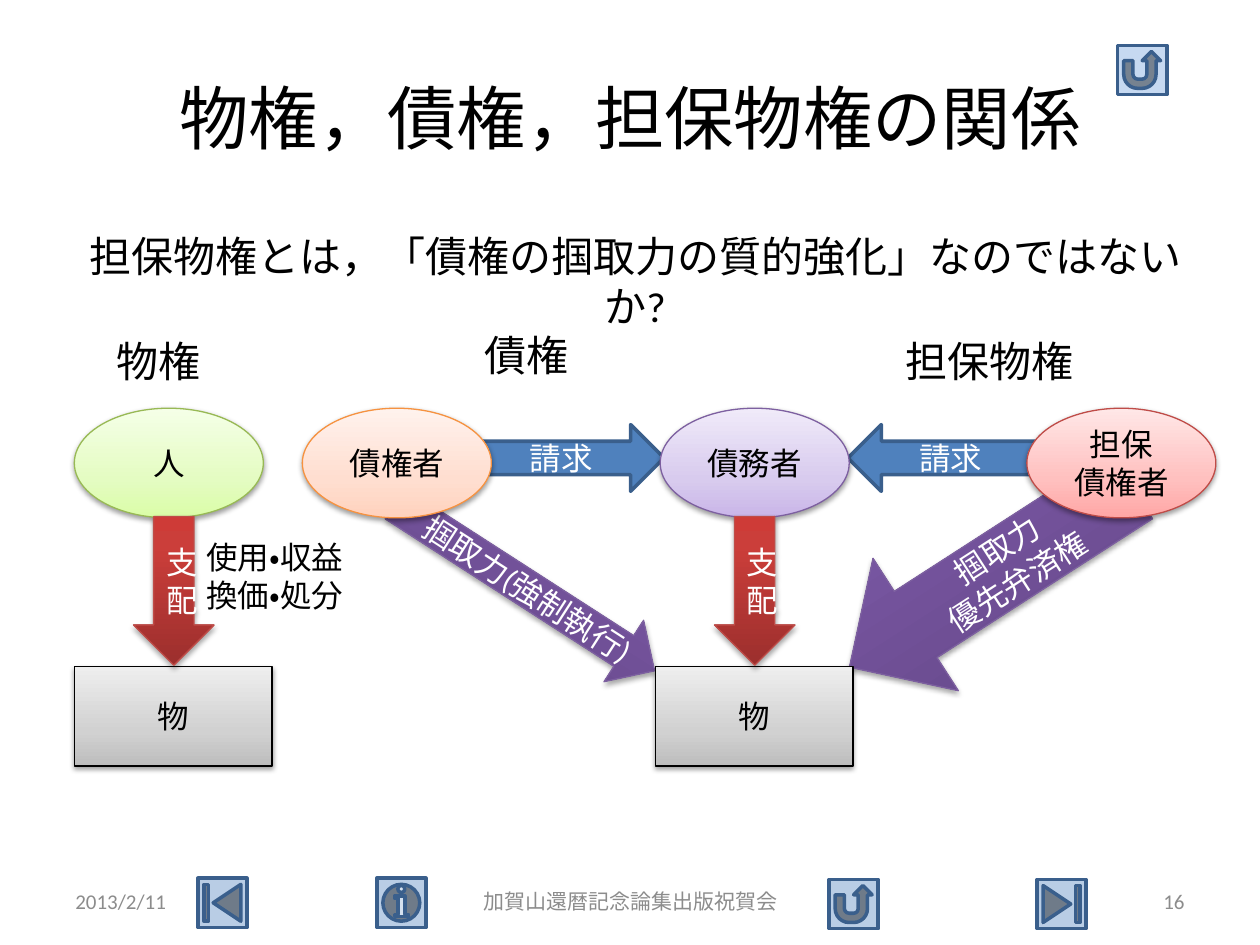
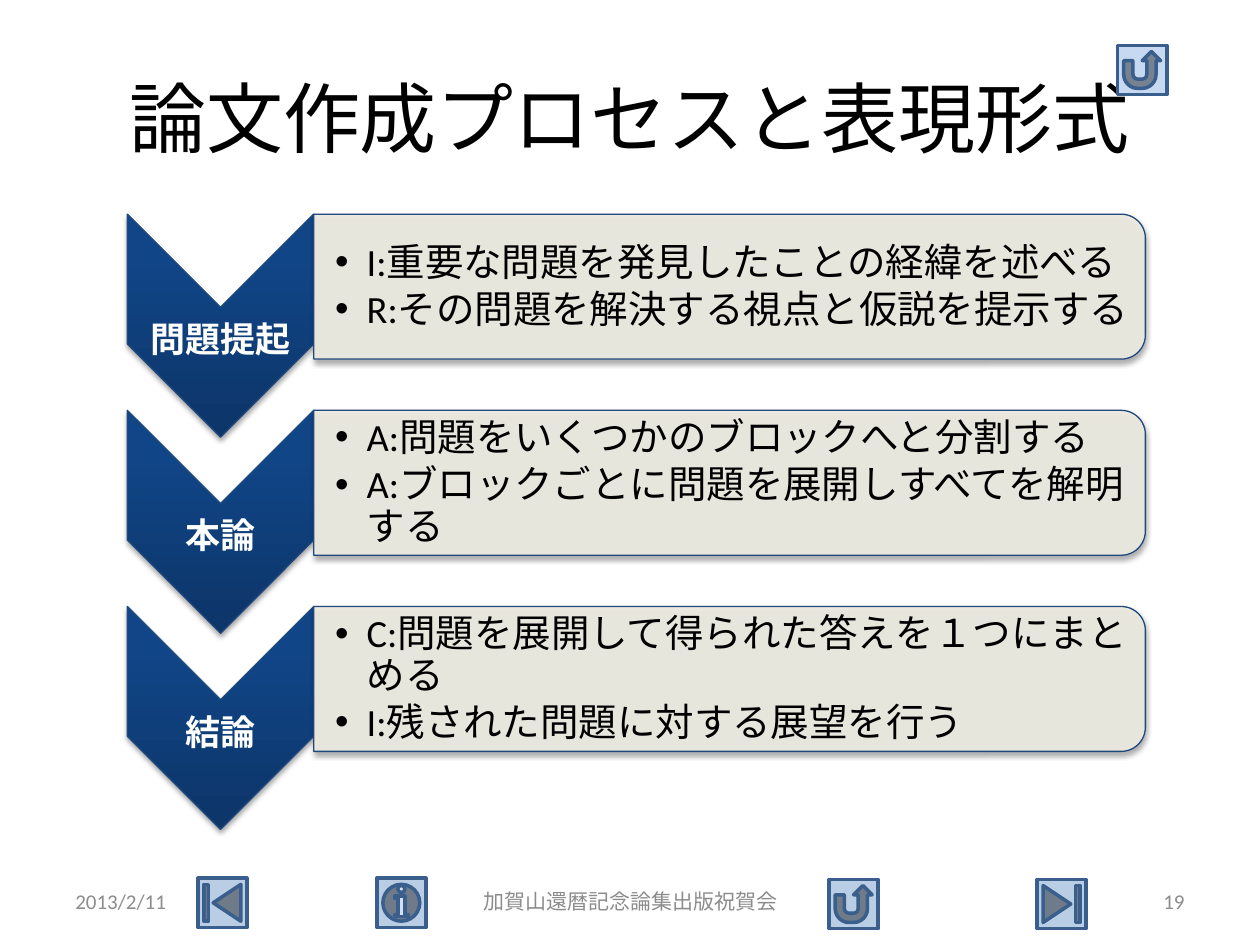
from dataclasses import dataclass
from typing import NamedTuple

from lxml.etree import SubElement as Sub
from pptx import Presentation
from pptx.dml.color import RGBColor as Rgb
from pptx.enum.lang import MSO_LANGUAGE_ID as Lang
from pptx.enum.shapes import MSO_SHAPE as Geo
from pptx.enum.text import MSO_ANCHOR as Anchor, MSO_AUTO_SIZE as Fit, PP_ALIGN as Align
from pptx.oxml.ns import qn
from pptx.util import Inches, Pt


@dataclass(frozen=True)
class Theme:
    font: str = "Calibri"
    ink: str = "000000"
    pale: str = "FFFFFF"
    gray: str = "8C8C8C"
    edge: str = "3A5F8C"
    blue: str = "4F81BD"
    button: str = "B9CDE5"
    corner: str = "C6D9F1"
    navy: str = "1F497D"
    cream: str = "EEECE1"
    title: float = 44
    tight: float = 39.6
    head: float = 24
    item: float = 22
    step: float = 20
    body: float = 18
    foot: float = 12


@dataclass(frozen=True)
class Paint:
    stops: tuple
    line: str
    ink: str
    alpha: int
    drop: float


def soft(low, mid, high, line):
    return Paint(((0, low), (35, mid), (100, high)), line, T.ink, 38, 1.6)


def deep(low, mid, high, line):
    return Paint(((0, low), (80, mid), (100, high)), line, T.pale, 35, 1.8)


class Box(NamedTuple):
    x: float
    y: float
    w: float
    h: float

    def cut(self, x, y, w, h):
        return Box(self.x + x, self.y + y, w, h)

    def turn(self):
        return Box(self.x + (self.w - self.h) / 2, self.y + (self.h - self.w) / 2,
                   self.h, self.w)

    def size(self):
        return [Inches(v) for v in self]


T = Theme()
GREEN = soft("DAFDA7", "E4FCC2", "F5FFE7", "98B955")
ORANGE = soft("FFD2BD", "FFDED0", "FFF2ED", "F69240")
LILAC = soft("C9B5E8", "D8CBEE", "F0EAF9", "7D60A0")
PINK = soft("FFA6A5", "FFC0BF", "FFE7E7", "BF4C48")
SILVER = soft("BDBDBD", "D1D1D1", "EEEEEE", "000000")
RED = deep("9C2F2D", "CB3E3A", "CE3B37", "BF4C48")
PURPLE = deep("5F4480", "7B58A6", "7C57A8", "7D60A0")
NAVY = deep("0D3568", "104587", "0E458A", T.navy)

STEPS = (
    ("問題提起", "I:重要な問題を発見したことの経緯を述べる\nR:その問題を解決する視点と仮説を提示する"),
    ("本論", "A:問題をいくつかのブロックへと分割する\nA:ブロックごとに問題を展開しすべてを解明する"),
    ("結論", "C:問題を展開して得られた答えを１つにまとめる\nI:残された問題に対する展望を行う"),
)


def put(item, **vals):
    for name, val in vals.items():
        setattr(item, name, val)


def write(shape, text, size, ink=T.ink, align=Align.CENTER, bold=False, frame=None, para=None):
    body = shape.text_frame
    body.text = text
    put(body, word_wrap=True, **(frame or {}))
    for line in body.paragraphs:
        put(line, alignment=align, **(para or {}))
        for run in line.runs:
            put(run.font, name=T.font, size=Pt(size), bold=bold, language_id=Lang.JAPANESE)
            run.font.color.rgb = Rgb.from_string(ink)


def label(slide, box, text, size, **opts):
    shape = slide.shapes.add_textbox(*box.size())
    write(shape, text, size, **opts)
    return shape


def flat(slide, box, geo, fill, line=T.edge, width=2):
    shape = slide.shapes.add_shape(geo, *box.size())
    shape.shadow.inherit = False
    shape.fill.solid()
    shape.fill.fore_color.rgb = Rgb.from_string(fill)
    shape.line.color.rgb = Rgb.from_string(line)
    shape.line.width = Pt(width)
    return shape


def shade(shape, alpha, drop):
    effect = shape.element.spPr.find(qn("a:effectLst"))
    cast = Sub(effect, qn("a:outerShdw"), blurRad=str(Pt(3.1)), dist=str(Pt(drop)),
               dir="5400000", rotWithShape="0")
    color = Sub(cast, qn("a:srgbClr"), val=T.ink)
    Sub(color, qn("a:alpha"), val=str(alpha * 1000))


def glow(slide, box, geo, paint, text="", align=Align.CENTER):
    shape = flat(slide, box, geo, T.pale, paint.line, 0.75)
    shape.fill.gradient()
    shape.fill.gradient_angle = 90
    stops = shape.element.spPr.find(qn("a:gradFill")).find(qn("a:gsLst"))
    stops.clear()
    for pos, color in paint.stops:
        stop = Sub(stops, qn("a:gs"), pos=str(pos * 1000))
        Sub(stop, qn("a:srgbClr"), val=color)
    shade(shape, paint.alpha, paint.drop)
    if text:
        write(shape, text, T.body, paint.ink, align)
    return shape


def button(slide, box, geo, fill=T.button):
    flat(slide, box, geo, fill)


def footer(slide, box, number):
    for x, y, geo in ((7.73, 0.03, Geo.ACTION_BUTTON_END),
                      (6.08, 0.03, Geo.ACTION_BUTTON_RETURN),
                      (1.07, 0.02, Geo.ACTION_BUTTON_BEGINNING),
                      (2.49, 0.02, Geo.ACTION_BUTTON_INFORMATION)):
        button(slide, box.cut(x, y, 0.39, 0.39), geo)
    for x, w, text, align in ((0, 2.33, "2013/2/11", Align.LEFT),
                              (2.92, 3.17, "加賀山還暦記念論集出版祝賀会", Align.CENTER),
                              (6.67, 2.33, str(number), Align.RIGHT)):
        label(slide, box.cut(x, 0, w, box.h), text, T.foot, ink=T.gray, align=align,
              frame={"vertical_anchor": Anchor.MIDDLE})


def start(deck, box, text, size, number):
    slide = deck.slides.add_slide(deck.slide_layouts[5])
    title = slide.shapes.title
    put(title, **dict(zip(("left", "top", "width", "height"), box.size())))
    write(title, text, size,
          frame={"vertical_anchor": Anchor.MIDDLE, "auto_size": Fit.NONE})
    footer(slide, Box(0.5, 6.95, 9, 0.4), number)
    button(slide, Box(8.87, 0.36, 0.39, 0.39), Geo.ACTION_BUTTON_RETURN, T.corner)
    return slide


def claims(slide, box):
    for x, geo in ((3.18, Geo.RIGHT_ARROW), (6.14, Geo.LEFT_ARROW)):
        arrow = flat(slide, box.cut(x, 0.13, 1.5, 0.53), geo, T.blue)
        write(arrow, "請求", T.body, T.pale)
    arrow = glow(slide, box.cut(5.94, 0.71, 2.66, 1.25), Geo.RIGHT_ARROW, PURPLE,
                 "掴取力\n優先弁済権")
    arrow.rotation = -32.8
    arrow.element.spPr.xfrm.set("flipH", "1")
    arrow = glow(slide, box.cut(2.35, 1.13, 2.45, 0.58), Geo.RIGHT_ARROW, PURPLE,
                 "掴取力(強制執行)", Align.RIGHT)
    arrow.rotation = 32.8


def rights(slide, box):
    claims(slide, box)
    for x, text, paint in ((0, "人", GREEN), (1.81, "債権者", ORANGE),
                           (4.65, "債務者", LILAC), (7.56, "担保\n債権者", PINK)):
        glow(slide, box.cut(x, 0, 1.5, 0.87), Geo.OVAL, paint, text)
    for x in (0, 4.61):
        glow(slide, box.cut(x, 2.05, 1.57, 0.79), Geo.RECTANGLE, SILVER, "物")
        glow(slide, box.cut(x + 0.47, 0.86, 0.64, 1.18), Geo.DOWN_ARROW, RED, "支配")
    for x, y, text in ((-0.16, -0.63, "物権"), (2.76, -0.67, "債権"),
                       (6.44, -0.63, "担保物権")):
        label(slide, box.cut(x, y, 1.65, 0.5), text, T.head)
    label(slide, box.cut(0.95, 0.98, 1.45, 0.71), "使用・収益\n換価・処分", T.body,
          align=Align.LEFT)


def insets(left, top, rest):
    return {"margin_left": Inches(left), "margin_top": Inches(top),
            "margin_right": Inches(rest), "margin_bottom": Inches(rest)}


def stage(slide, box, name, items):
    mark = glow(slide, box.cut(0, 0, 1.48, 1.77).turn(), Geo.CHEVRON, NAVY)
    mark.rotation = 90
    mark.element.spPr.find(qn("a:gradFill")).set("rotWithShape", "0")
    label(slide, box.cut(0, 0.74, 1.48, 0.29), name, T.step, ink=T.pale, bold=True,
          frame=insets(0.01, 0.12, 0.01), para={"line_spacing": 0.9})

    panel = flat(slide, box.cut(1.48, 0, 6.6, 1.15).turn(),
                 Geo.ROUND_2_SAME_RECTANGLE, T.cream, T.navy, 0.75)
    panel.rotation = 90
    color = panel.element.spPr.find(qn("a:solidFill")).find(qn("a:srgbClr"))
    Sub(color, qn("a:alpha"), val="90000")
    shade(panel, 35, 1.8)
    text = label(slide, box.cut(1.48, 0.06, 6.55, 1.04), items, T.item, align=Align.LEFT,
                 frame={"vertical_anchor": Anchor.MIDDLE, **insets(0.17, 0.02, 0.02)},
                 para={"level": 1, "line_spacing": 0.9, "space_after": Pt(3.3)})
    for line in text.text_frame.paragraphs:
        props = line._p.get_or_add_pPr()
        props.set("marL", str(Inches(0.25)))
        props.set("indent", str(Inches(-0.25)))
        Sub(props, qn("a:buFont"), typeface="Arial")
        Sub(props, qn("a:buChar"), char="•")


def process(slide, box):
    for row, (name, items) in enumerate(STEPS):
        stage(slide, box.cut(0, row * box.h / len(STEPS), box.w, 1.77), name, items)


def main():
    deck = Presentation()
    put(deck, slide_width=Inches(10), slide_height=Inches(7.5))
    slide = start(deck, Box(1.28, 0.3, 7.44, 1.25), "物権，債権，担保物権の関係", T.tight, 16)
    label(slide, Box(0.59, 1.78, 8.9, 0.5),
          "担保物権とは，「債権の掴取力の質的強化」なのではないか?", T.head)
    rights(slide, Box(0.59, 3.24, 9.06, 2.84))
    slide = start(deck, Box(0.5, 0.3, 9, 1.25), "論文作成プロセスと表現形式", T.title, 19)
    process(slide, Box(1.01, 1.7, 8.08, 4.67))
    deck.save("out.pptx")


if __name__ == "__main__":
    main()
